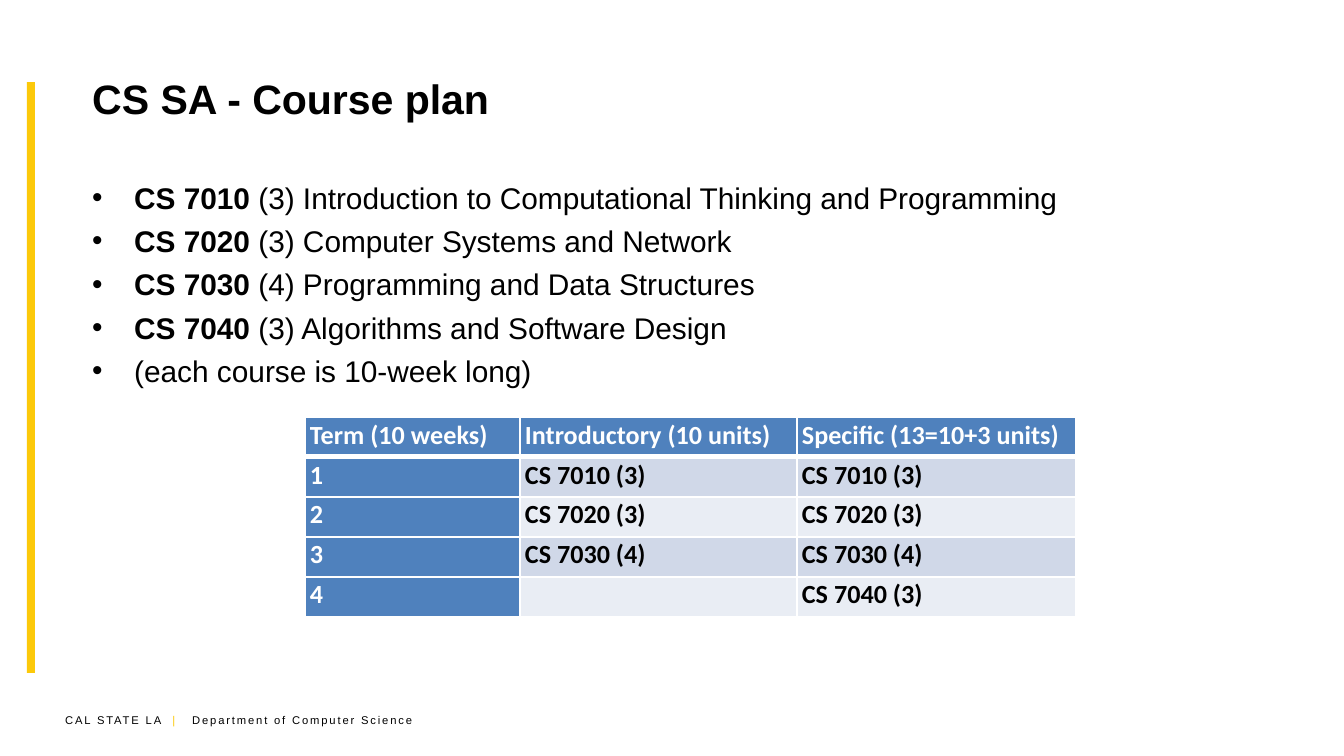
import pptx
import pptx.dml.color
import pptx.enum.shapes
import pptx.enum.text
import pptx.oxml.ns
import pptx.util
from lxml import etree

EMU_PER_PX = 914400 / 134.4

BLACK = pptx.dml.color.RGBColor(0x00, 0x00, 0x00)
WHITE = pptx.dml.color.RGBColor(0xFF, 0xFF, 0xFF)
GOLD = pptx.dml.color.RGBColor(0xFC, 0xC9, 0x0A)
BLUE = pptx.dml.color.RGBColor(0x4F, 0x81, 0xBD)
BAND_DARK = pptx.dml.color.RGBColor(0xD0, 0xD8, 0xE8)
BAND_LIGHT = pptx.dml.color.RGBColor(0xE9, 0xED, 0xF4)

COURSES = [
    ("CS 7010", " (3) Introduction to Computational Thinking and Programming"),
    ("CS 7020", " (3) Computer Systems and Network"),
    ("CS 7030", " (4) Programming and Data Structures"),
    ("CS 7040", " (3) Algorithms and Software Design"),
    ("", "(each course is 10-week long)"),
]
PLAN = [
    ("Term (10 weeks)", "Introductory (10 units)", "Specific (13=10+3 units)"),
    ("1", "CS 7010 (3)", "CS 7010 (3)"),
    ("2", "CS 7020 (3)", "CS 7020 (3)"),
    ("3", "CS 7030 (4)", "CS 7030 (4)"),
    ("4", "", "CS 7040 (3)"),
]
COLUMN_WIDTHS = [215, 277, 279]
ROW_HEIGHT = 40


def px(length):
    return pptx.util.Emu(round(length * EMU_PER_PX))


def add_run(paragraph, text, size, color=BLACK, bold=False, name="Arial"):
    run = paragraph.add_run()
    run.text = text
    run.font.name = name
    run.font.size = pptx.util.Pt(size)
    run.font.bold = bold
    run.font.color.rgb = color
    return run


presentation = pptx.Presentation()
presentation.slide_width = px(1344)
presentation.slide_height = px(756)
slide = presentation.slides.add_slide(presentation.slide_layouts[6])

# Footer
footer = slide.shapes.add_textbox(px(52), px(707), px(392), px(27))
footer.text_frame.word_wrap = True
paragraph = footer.text_frame.paragraphs[0]
tabs = etree.SubElement(paragraph._p.get_or_add_pPr(), pptx.oxml.ns.qn("a:tabLst"))
etree.SubElement(tabs, pptx.oxml.ns.qn("a:tab"), pos=str(px(127)), algn="l")
for text, color in [
    ("CAL STATE LA ", BLACK),
    (" |\t", GOLD),
    ("Department of Computer Science", BLACK),
]:
    run = add_run(paragraph, text, 6, color)
    run.font._element.set("spc", "100")

# Accent bar
bar = slide.shapes.add_shape(
    pptx.enum.shapes.MSO_SHAPE.RECTANGLE, px(27), px(82), px(8), px(591)
)
bar.shadow.inherit = False
bar.fill.solid()
bar.fill.fore_color.rgb = GOLD
bar.line.fill.background()

# Title
title = slide.shapes.add_textbox(px(79), px(35), px(1196), px(126))
title.text_frame.word_wrap = True
title.text_frame.vertical_anchor = pptx.enum.text.MSO_ANCHOR.MIDDLE
add_run(title.text_frame.paragraphs[0], "CS SA - Course plan", 22, bold=True)

# Course list
course_list = slide.shapes.add_textbox(px(79), px(173), px(1196), px(499))
course_list.text_frame.word_wrap = True
for index, (code, description) in enumerate(COURSES):
    if index == 0:
        paragraph = course_list.text_frame.paragraphs[0]
    else:
        paragraph = course_list.text_frame.add_paragraph()
    properties = paragraph._p.get_or_add_pPr()
    properties.set("marL", str(px(42)))
    properties.set("indent", str(px(-42)))
    etree.SubElement(properties, pptx.oxml.ns.qn("a:buFont"), typeface="Arial")
    etree.SubElement(properties, pptx.oxml.ns.qn("a:buChar"), char="•")
    if index > 0:
        paragraph.space_before = pptx.util.Pt(4)
    if code:
        add_run(paragraph, code, 16, bold=True)
    add_run(paragraph, description, 16)

# Course plan table
table = slide.shapes.add_table(
    len(PLAN), len(COLUMN_WIDTHS), px(305), px(417),
    px(sum(COLUMN_WIDTHS)), px(ROW_HEIGHT * len(PLAN)),
).table
for column, width in zip(table.columns, COLUMN_WIDTHS):
    column.width = px(width)
for row_index, values in enumerate(PLAN):
    table.rows[row_index].height = px(ROW_HEIGHT)
    for column_index, value in enumerate(values):
        cell = table.cell(row_index, column_index)
        cell.margin_left = cell.margin_right = px(5)
        cell.margin_top = cell.margin_bottom = 0

        # The rule under the header row is thicker than the others
        thick_side = {0: "a:lnB", 1: "a:lnT"}.get(row_index)
        for side in ("a:lnL", "a:lnR", "a:lnT", "a:lnB"):
            width = pptx.util.Pt(3 if side == thick_side else 1)
            border = etree.SubElement(
                cell._tc.get_or_add_tcPr(), pptx.oxml.ns.qn(side), w=str(width)
            )
            fill = etree.SubElement(border, pptx.oxml.ns.qn("a:solidFill"))
            etree.SubElement(fill, pptx.oxml.ns.qn("a:srgbClr"), val=str(WHITE))

        is_heading = row_index == 0 or column_index == 0
        band = BAND_DARK if row_index % 2 else BAND_LIGHT
        cell.fill.solid()
        cell.fill.fore_color.rgb = BLUE if is_heading else band
        if value:
            paragraph = cell.text_frame.paragraphs[0]
            paragraph.line_spacing = 1.07
            color = WHITE if is_heading else BLACK
            add_run(paragraph, value, 14, color, bold=True, name="Calibri")

presentation.save("out.pptx")
